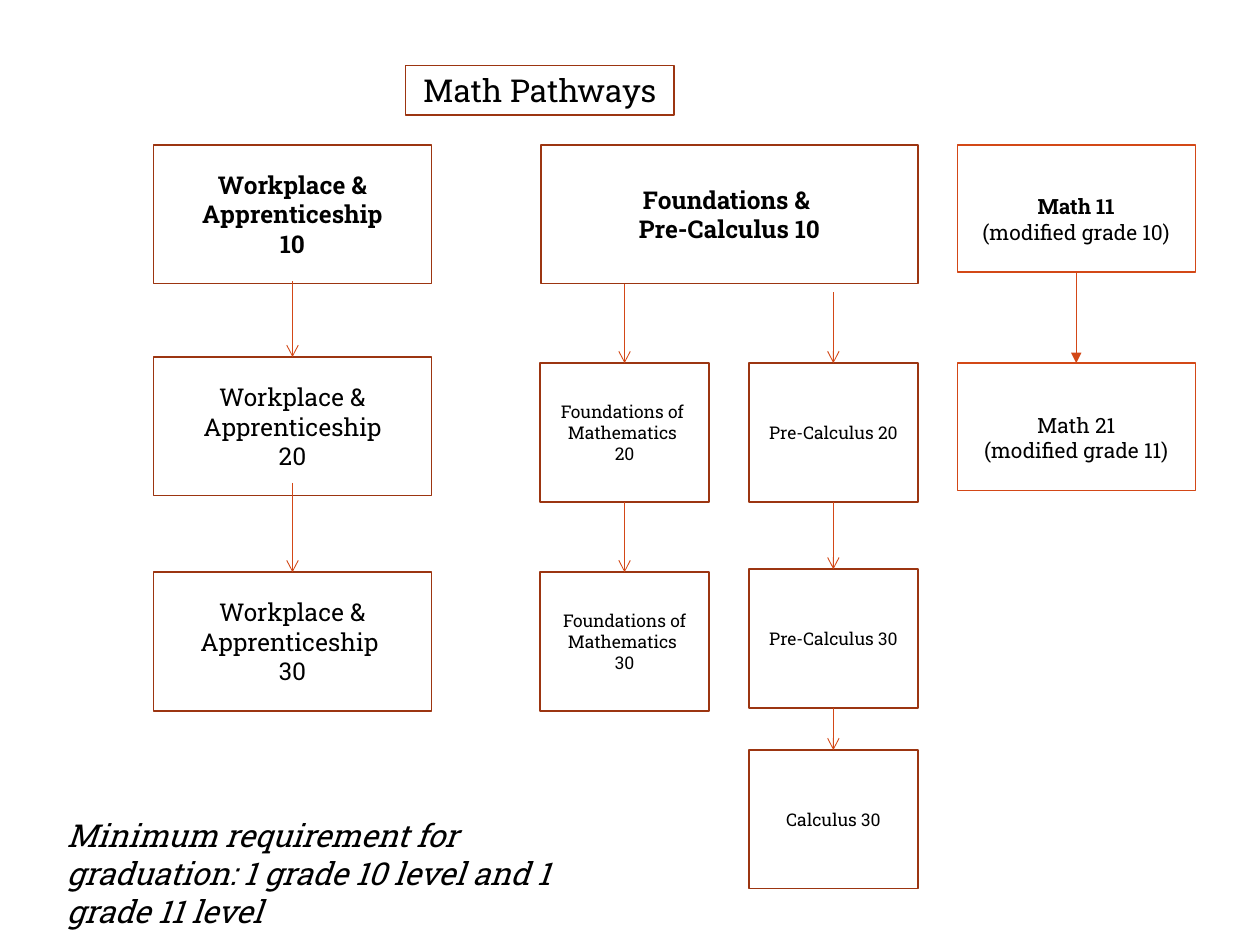
from lxml import etree
from pptx import Presentation
from pptx.dml.color import RGBColor
from pptx.enum import shapes, text
from pptx.oxml import ns
from pptx.util import Pt

FONT = "Roboto Slab"
COLORS = {"text": "000000", "border": "9C3511", "accent": "D34817"}
PROCESS = shapes.MSO_SHAPE.FLOWCHART_PROCESS
RECTANGLE = shapes.MSO_SHAPE.RECTANGLE

# Shared measures, in points
BOX_HEIGHT = 79.2
TOP_ROW = 82.8
WORKPLACE_LEFT, WORKPLACE_WIDTH = 87.8, 158.7
FOUNDATIONS_LEFT, PRECALCULUS_LEFT, COURSE_WIDTH = 308.5, 427.8, 96.8
MODIFIED_LEFT, MODIFIED_WIDTH, MODIFIED_HEIGHT = 547, 136, 72.7
SECOND_ROW = 207.5


def color(name):
    return RGBColor.from_string(COLORS[name])


def add_paragraphs(frame, lines, size, bold_lines=0, italic=False, align=None):
    """Write one paragraph per line; the first bold_lines are bold."""
    frame.word_wrap = True
    for index, line in enumerate(lines):
        paragraph = frame.paragraphs[0] if index == 0 else frame.add_paragraph()
        paragraph.alignment = align
        run = paragraph.add_run()
        run.text = line
        run.font.name = FONT
        run.font.size = Pt(size)
        run.font.bold = index < bold_lines
        run.font.italic = italic
        run.font.color.rgb = color("text")


def add_box(slide, left, top, width, height, lines, size, bold_lines=0,
            kind=PROCESS, border="border", weight=1, text_top=None):
    """Add an outlined box, its text centred or starting text_top below the edge."""
    shape = slide.shapes.add_shape(kind, Pt(left), Pt(top), Pt(width), Pt(height))
    shape.shadow.inherit = False
    shape.fill.background()
    shape.line.color.rgb = color(border)
    shape.line.width = Pt(weight)
    frame = shape.text_frame
    frame.vertical_anchor = text.MSO_ANCHOR.MIDDLE
    if text_top is not None:
        frame.vertical_anchor = text.MSO_ANCHOR.TOP
        frame.margin_top = Pt(text_top)
    add_paragraphs(frame, lines, size, bold_lines, align=text.PP_ALIGN.CENTER)


def add_arrow(slide, x, start, end, head="arrow"):
    """Add a thin downward arrow."""
    connector = slide.shapes.add_connector(
        shapes.MSO_CONNECTOR.STRAIGHT, Pt(x), Pt(start), Pt(x), Pt(end))
    connector.line.color.rgb = color("accent")
    connector.line.width = Pt(0.5)
    line = connector.line._get_or_add_ln()
    etree.SubElement(line, ns.qn("a:tailEnd"), type=head)
    etree.SubElement(connector._element.spPr, ns.qn("a:effectLst"))


def add_workplace_path(slide):
    center = WORKPLACE_LEFT + WORKPLACE_WIDTH / 2
    courses = [("Workplace & Apprenticeship", "10", TOP_ROW, 2),
               ("Workplace & Apprenticeship", "20", 204, 0),
               ("Workplace & Apprenticeship ", "30", 327, 0)]
    for name, level, top, bold_lines in courses:
        add_box(slide, WORKPLACE_LEFT, top, WORKPLACE_WIDTH, BOX_HEIGHT,
                [name, level], 14, bold_lines)
    for start, end in [(160.8, 204), (276, 327)]:
        add_arrow(slide, center, start, end)


def add_academic_paths(slide):
    add_box(slide, 309, TOP_ROW, 215.7, BOX_HEIGHT,
            ["Foundations & ", "Pre-Calculus 10"], 14, 2, kind=RECTANGLE)
    courses = [
        (FOUNDATIONS_LEFT, SECOND_ROW, ["Foundations of ", "Mathematics ", "20"]),
        (FOUNDATIONS_LEFT, 327, ["Foundations of Mathematics ", "30"]),
        (PRECALCULUS_LEFT, SECOND_ROW, ["Pre-Calculus 20"]),
        (PRECALCULUS_LEFT, 325.3, ["Pre-Calculus 30"]),
        (PRECALCULUS_LEFT, 428.6, ["Calculus 30"]),
    ]
    for left, top, lines in courses:
        add_box(slide, left, top, COURSE_WIDTH, BOX_HEIGHT, lines, 10)
    arrows = [(FOUNDATIONS_LEFT, 162, SECOND_ROW),
              (FOUNDATIONS_LEFT, 287, 327),
              (PRECALCULUS_LEFT, 167, SECOND_ROW),
              (PRECALCULUS_LEFT, 287, 325.3),
              (PRECALCULUS_LEFT, 404.5, 428.6)]
    for left, start, end in arrows:
        add_arrow(slide, left + COURSE_WIDTH / 2, start, end)


def add_modified_path(slide):
    courses = [(TOP_ROW, ["Math 11", "(modified grade 10)"], 1),
               (SECOND_ROW, ["Math 21", "(modified grade 11)"], 0)]
    for top, lines, bold_lines in courses:
        add_box(slide, MODIFIED_LEFT, top, MODIFIED_WIDTH, MODIFIED_HEIGHT, lines,
                12, bold_lines, RECTANGLE, "accent", 0.75, text_top=28)
    add_arrow(slide, MODIFIED_LEFT + MODIFIED_WIDTH / 2,
              TOP_ROW + MODIFIED_HEIGHT, SECOND_ROW, "triangle")


def add_requirement(slide):
    box = slide.shapes.add_textbox(Pt(31), Pt(463), Pt(311.8), Pt(72.7))
    add_paragraphs(box.text_frame, [
        "Minimum requirement for graduation: 1 grade 10 level and 1 grade 11 level"
    ], 18, italic=True)


def main():
    presentation = Presentation()
    presentation.slide_width, presentation.slide_height = Pt(720), Pt(540)
    slide = presentation.slides.add_slide(presentation.slide_layouts[6])

    # Title
    add_box(slide, 231.8, 37.4, 153.4, 28.2, ["Math Pathways"], 18)
    # Course pathways
    add_workplace_path(slide)
    add_academic_paths(slide)
    add_modified_path(slide)
    # Graduation note
    add_requirement(slide)

    presentation.save("out.pptx")


if __name__ == "__main__":
    main()
